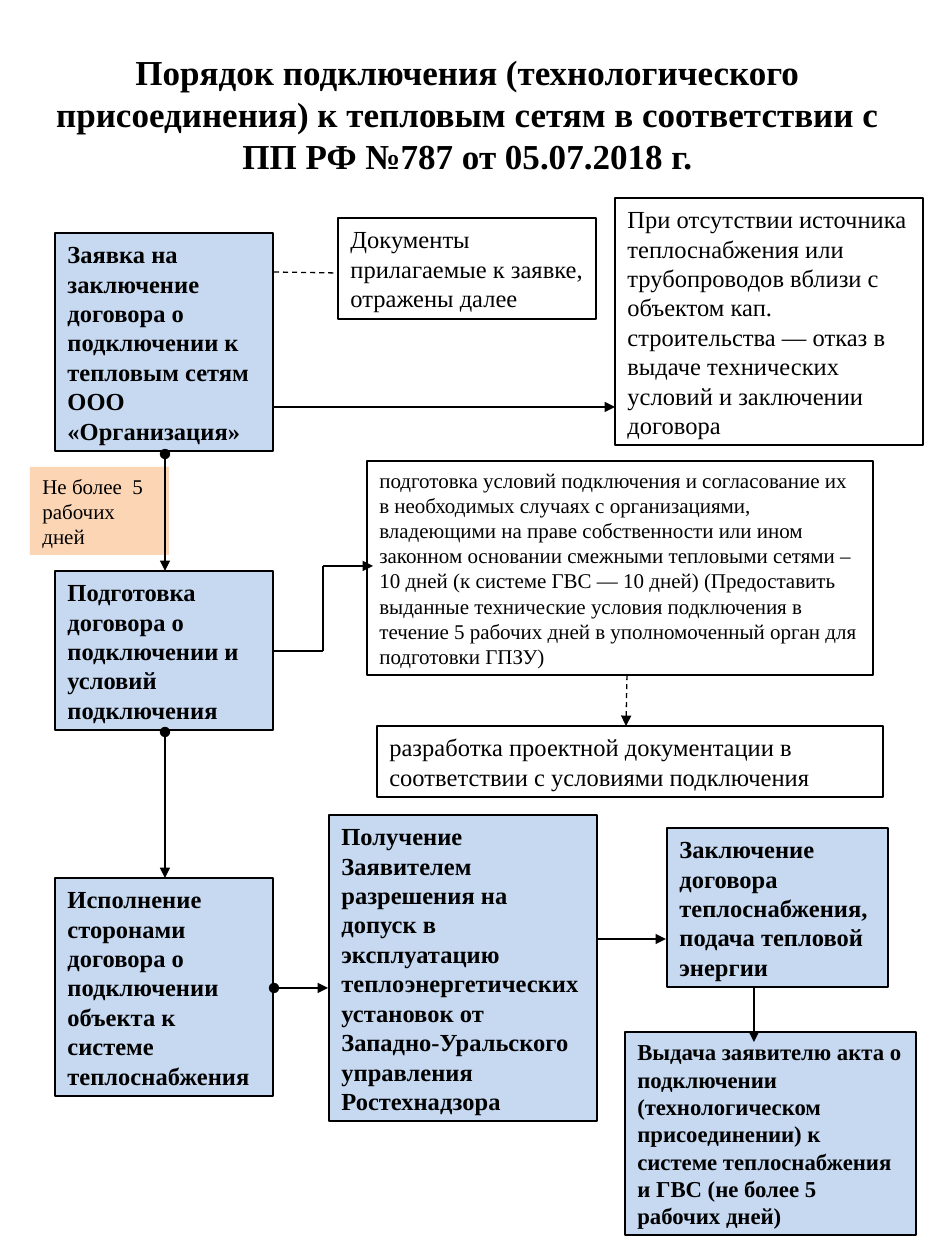
from pptx import Presentation, util as u
from pptx.dml.color import RGBColor
from pptx.enum import dml, shapes, text
from pptx.oxml.ns import qn
from lxml import etree

PX = 914400 / 126
C = {"ink": "000000", "step": "C6D9F1", "term": "FCD5B5"}


def px(n):
    return u.Emu(round(n * PX))


def rgb(name):
    return RGBColor.from_string(C[name])


def write(sp, words, size=14, bold=False, align=text.PP_ALIGN.LEFT):
    tf = sp.text_frame
    tf.word_wrap = True
    tf.vertical_anchor = text.MSO_ANCHOR.TOP
    p = tf.paragraphs[0]
    p.alignment = align
    r = p.add_run()
    r.text = words
    r.font.name = "Times New Roman"
    r.font.size = u.Pt(size)
    r.font.bold = bold
    r.font.color.rgb = rgb("ink")


def title(s, at, words):
    sp = s.shapes.add_textbox(*map(px, at))
    write(sp, words, size=20, bold=True, align=text.PP_ALIGN.CENTER)


def box(s, at, words, fill=None, outline=True, **fmt):
    sp = s.shapes.add_shape(shapes.MSO_SHAPE.RECTANGLE, *map(px, at))
    sp.shadow.inherit = False
    if fill:
        sp.fill.solid()
        sp.fill.fore_color.rgb = rgb(fill)
    else:
        sp.fill.background()
    if outline:
        sp.line.color.rgb = rgb("ink")
        sp.line.width = u.Pt(0.75)
    else:
        sp.line.fill.background()
    write(sp, words, **fmt)


def step(s, at, words, size=14):
    box(s, at, words, fill="step", size=size, bold=True)


def link(s, ends, head=None, tail="triangle", dash=False):
    cx = s.shapes.add_connector(shapes.MSO_CONNECTOR.STRAIGHT, *map(px, ends))
    cx.line.color.rgb = rgb("ink")
    cx.line.width = u.Pt(0.75)
    if dash:
        cx.line.dash_style = dml.MSO_LINE.DASH
    ln = cx.line._get_or_add_ln()
    for tag, kind in (("a:headEnd", head), ("a:tailEnd", tail)):
        if kind:
            etree.SubElement(ln, qn(tag), type=kind)
    etree.SubElement(cx._element.spPr, qn("a:effectLst"))


def main():
    prs = Presentation()
    prs.slide_width, prs.slide_height = u.Inches(7.5), u.Inches(10)
    s = prs.slides.add_slide(prs.slide_layouts[6])

    title(s, (26, 44, 883, 139),
          "Порядок подключения (технологического присоединения) к тепловым "
          "сетям в соответствии с ПП РФ №787 от 05.07.2018 г.")

    step(s, (55, 233, 218, 218),
         "Заявка на заключение договора о подключении к тепловым сетям "
         "ООО «Организация»")
    box(s, (30, 467, 139, 88), "Не более  5 рабочих дней",
        fill="term", outline=False, size=12)
    step(s, (55, 571, 218, 159),
         "Подготовка договора о подключении и условий подключения")
    step(s, (55, 878, 218, 218),
         "Исполнение сторонами договора о подключении объекта к системе "
         "теплоснабжения")
    step(s, (329, 815, 268, 306),
         "Получение Заявителем разрешения на допуск в эксплуатацию "
         "теплоэнергетических установок от Западно-Уральского управления "
         "Ростехнадзора")
    step(s, (667, 828, 221, 159),
         "Заключение договора теплоснабжения, подача тепловой энергии")
    step(s, (625, 1032, 291, 203),
         "Выдача заявителю акта о подключении (технологическом "
         "присоединении) к системе теплоснабжения и ГВС (не более 5 "
         "рабочих дней)", size=13)

    box(s, (338, 218, 258, 101),
        "Документы прилагаемые к заявке, отражены далее")
    box(s, (615, 198, 308, 247),
        "При отсутствии источника теплоснабжения или трубопроводов вблизи "
        "с объектом кап. строительства — отказ в выдаче технических "
        "условий и заключении договора")
    box(s, (367, 461, 506, 214),
        "подготовка условий подключения и согласование их в необходимых "
        "случаях с организациями, владеющими на праве собственности или "
        "ином законном основании смежными тепловыми сетями – 10 дней "
        "(к системе ГВС — 10 дней) (Предоставить выданные технические "
        "условия подключения в течение 5 рабочих дней в уполномоченный "
        "орган для подготовки ГПЗУ)", size=12)
    box(s, (377, 726, 506, 71),
        "разработка проектной документации в соответствии с условиями "
        "подключения")

    for ends in ((165, 454, 165, 571), (165, 732, 165, 878),
                 (274, 988, 328, 988)):
        link(s, ends, head="oval")
    for ends in ((274, 407, 615, 407), (323, 566, 373, 566),
                 (597, 939, 666, 939), (754, 987, 754, 1042)):
        link(s, ends)
    for ends in ((274, 651, 323, 651), (323, 651, 323, 566)):
        link(s, ends, tail=None)
    link(s, (274, 272, 338, 273), tail=None, dash=True)
    link(s, (627, 675, 626, 726), dash=True)

    prs.save("out.pptx")


if __name__ == "__main__":
    main()
